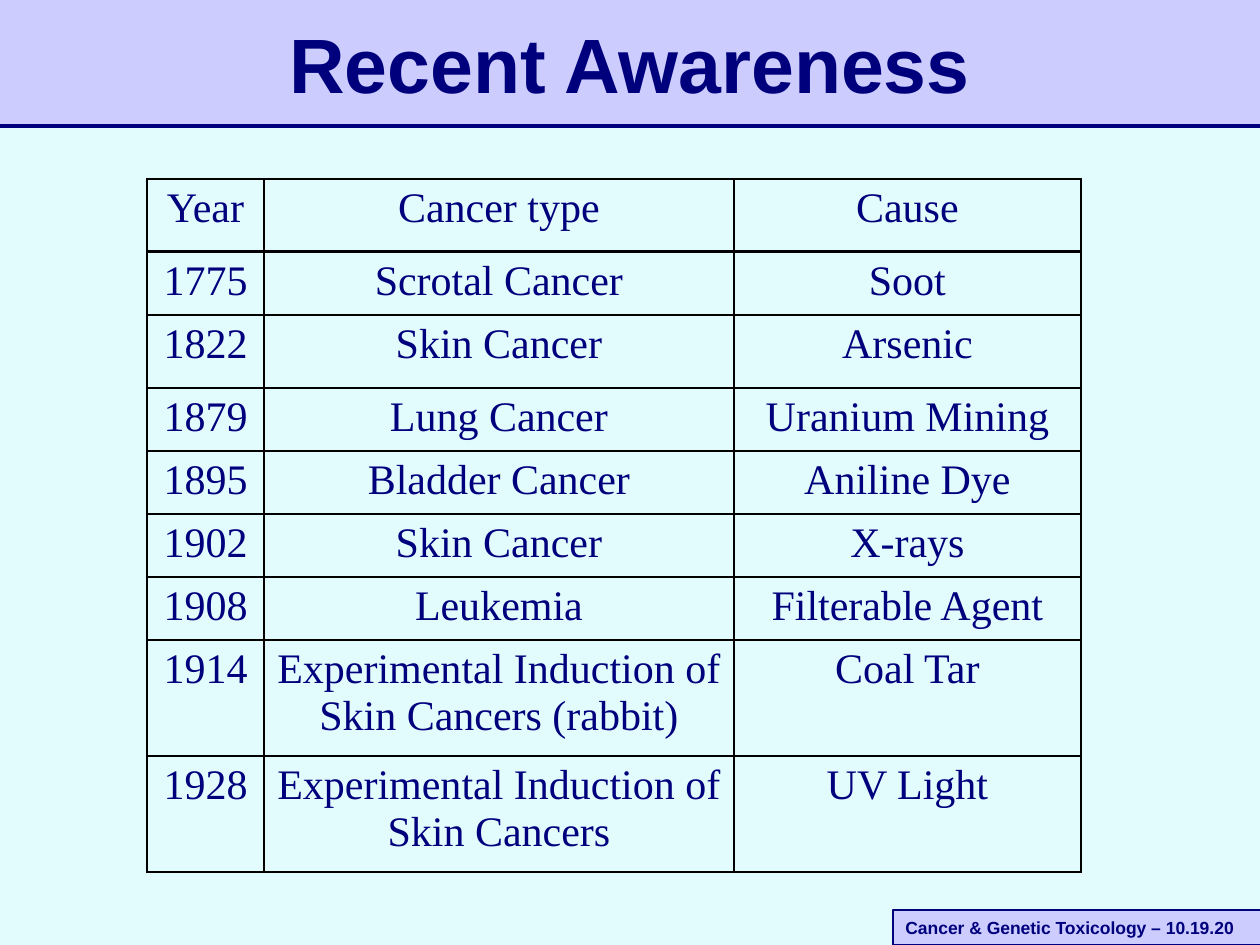
from pptx import Presentation
from pptx.dml.color import RGBColor
from pptx.enum.shapes import MSO_CONNECTOR, MSO_SHAPE
from pptx.enum.text import MSO_ANCHOR, PP_ALIGN
from pptx.oxml.ns import qn
from pptx.util import Pt
from lxml import etree

RECT = MSO_SHAPE.RECTANGLE
STRAIGHT = MSO_CONNECTOR.STRAIGHT
MIDDLE = MSO_ANCHOR.MIDDLE
LEFT, CENTER = PP_ALIGN.LEFT, PP_ALIGN.CENTER

NAVY = RGBColor(0x00, 0x00, 0x7D)
LAVENDER = RGBColor(0xCC, 0xCC, 0xFF)
PALE_CYAN = RGBColor(0xE2, 0xFC, 0xFE)
BLACK = RGBColor(0x00, 0x00, 0x00)

TITLE = "Recent Awareness"
FOOTER = "Cancer & Genetic Toxicology – 10.19.20"
ROWS = [
    ("Year", "Cancer type", "Cause"),
    ("1775", "Scrotal Cancer", "Soot"),
    ("1822", "Skin Cancer", "Arsenic"),
    ("1879", "Lung Cancer", "Uranium Mining"),
    ("1895", "Bladder Cancer", "Aniline Dye"),
    ("1902", "Skin Cancer", "X-rays"),
    ("1908", "Leukemia", "Filterable Agent"),
    ("1914", "Experimental Induction of Skin Cancers (rabbit)", "Coal Tar"),
    ("1928", "Experimental Induction of Skin Cancers", "UV Light"),
]
COL_WIDTHS = [117, 470, 347]
ROW_HEIGHTS = [73, 63, 73, 63, 63, 63, 63, 116, 116]

WIDTH, HEIGHT = 1260, 945
BAND_HEIGHT = 126


def px(n):
    return round(n * 914400 / 126)


def add_text(tf, text, size, font, align, bold=False):
    p = tf.paragraphs[0]
    p.alignment = align
    r = p.add_run()
    r.text = text
    r.font.size = Pt(size)
    r.font.name = font
    r.font.bold = bold
    r.font.color.rgb = NAVY


def add_box(s, x, y, w, h):
    sp = s.shapes.add_shape(RECT, px(x), px(y), px(w), px(h))
    sp.shadow.inherit = False
    sp.fill.solid()
    sp.fill.fore_color.rgb = LAVENDER
    return sp


def set_borders(cell, top, bottom):
    """Draw all four edges; top and bottom are widths in points."""
    tc_pr = cell._tc.get_or_add_tcPr()
    for tag, width in (("a:lnL", 1), ("a:lnR", 1), ("a:lnT", top), ("a:lnB", bottom)):
        ln = etree.SubElement(tc_pr, qn(tag), w=str(Pt(width)))
        fill = etree.SubElement(ln, qn("a:solidFill"))
        etree.SubElement(fill, qn("a:srgbClr"), val=str(BLACK))


def add_header(s):
    add_box(s, 0, 0, WIDTH, BAND_HEIGHT).line.fill.background()
    rule = s.shapes.add_connector(STRAIGHT, 0, px(BAND_HEIGHT), px(WIDTH), px(BAND_HEIGHT))
    rule.line.color.rgb = NAVY
    rule.line.width = Pt(2)
    etree.SubElement(rule._element.spPr, qn("a:effectLst"))
    tf = s.shapes.add_textbox(px(21), px(10), px(1218), px(105)).text_frame
    tf.word_wrap = True
    tf.vertical_anchor = MIDDLE
    add_text(tf, TITLE, 44, "Arial", CENTER, bold=True)


def add_footer(s):
    sp = add_box(s, 893, 910, 368, 35)
    sp.line.color.rgb = NAVY
    sp.line.width = Pt(0.75)
    sp.text_frame.vertical_anchor = MIDDLE
    add_text(sp.text_frame, FOOTER, 10, "Arial", LEFT, bold=True)


def add_cancer_table(s):
    table = s.shapes.add_table(len(ROWS), len(COL_WIDTHS), px(147), px(179),
                               px(sum(COL_WIDTHS)), px(sum(ROW_HEIGHTS))).table
    table.first_row = False
    table.horz_banding = False
    for col, width in zip(table.columns, COL_WIDTHS):
        col.width = px(width)
    for i, (values, height) in enumerate(zip(ROWS, ROW_HEIGHTS)):
        table.rows[i].height = px(height)
        for j, value in enumerate(values):
            cell = table.cell(i, j)
            set_borders(cell, top=2 if i == 1 else 1, bottom=2 if i == 0 else 1)
            cell.fill.background()
            add_text(cell.text_frame, value, 24, "Times New Roman", CENTER)


def main():
    prs = Presentation()
    prs.slide_width, prs.slide_height = px(WIDTH), px(HEIGHT)
    s = prs.slides.add_slide(prs.slide_layouts[6])
    s.background.fill.solid()
    s.background.fill.fore_color.rgb = PALE_CYAN
    add_header(s)
    add_footer(s)
    add_cancer_table(s)
    prs.save("out.pptx")


if __name__ == "__main__":
    main()
